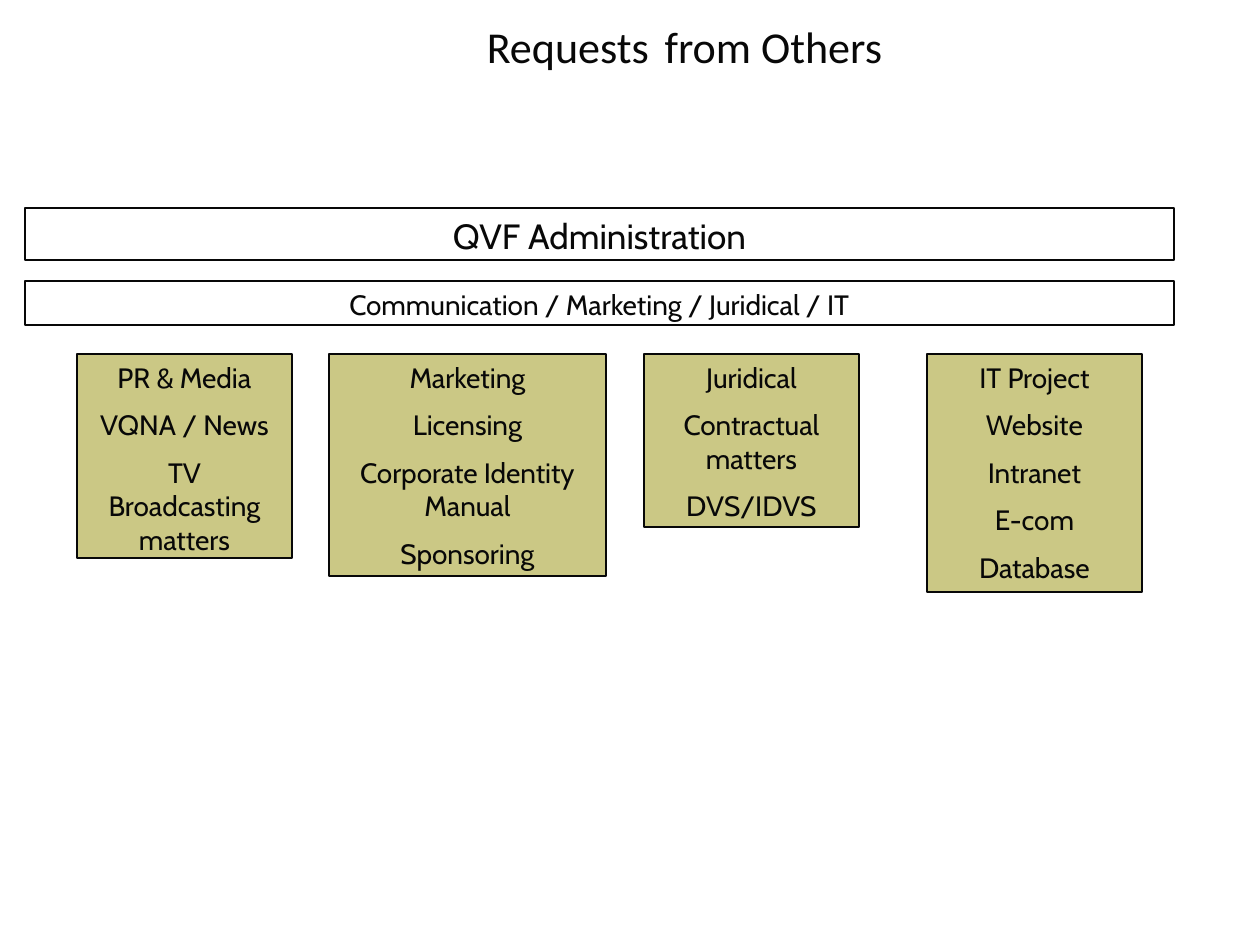
from pptx import Presentation
from pptx.dml.color import RGBColor
from pptx.enum.shapes import MSO_SHAPE as Shape
from pptx.enum.text import MSO_ANCHOR as Anchor, MSO_AUTO_SIZE as AutoSize, PP_ALIGN as Align
from pptx.util import Emu, Pt

INK = RGBColor(0x08, 0x08, 0x08)
OLIVE = RGBColor(0xCB, 0xC8, 0x85)
PX = 914400 // 126


def px(length):
    return Emu(length * PX)


class Chart:
    title_font = "Calibri"
    body_font = "Cabin"
    line_width = Pt(1.5)

    def __init__(self, deck):
        self.page = deck.slides.add_slide(deck.slide_layouts[5])

    def style(self, span, font, size):
        span.font.name = font
        span.font.size = Pt(size)
        span.font.color.rgb = INK

    def title(self, left, top, width, height, spans):
        box = self.page.shapes.title
        box.left, box.top, box.width, box.height = map(px, (left, top, width, height))
        frame = box.text_frame
        frame.auto_size = AutoSize.NONE
        frame.vertical_anchor = Anchor.MIDDLE
        para = frame.paragraphs[0]
        para.alignment = Align.CENTER
        for text, size in spans:
            span = para.add_run()
            span.text = text
            self.style(span, self.title_font, size)

    def box(self, left, top, width, height, lines, size=16, fill=None):
        box = self.page.shapes.add_shape(Shape.RECTANGLE, *map(px, (left, top, width, height)))
        box.shadow.inherit = False
        box.line.color.rgb = INK
        box.line.width = self.line_width
        if fill is None:
            box.fill.background()
        else:
            box.fill.solid()
            box.fill.fore_color.rgb = fill
        frame = box.text_frame
        frame.word_wrap = True
        frame.auto_size = AutoSize.SHAPE_TO_FIT_TEXT
        frame.vertical_anchor = Anchor.TOP
        frame.text = "\n".join(lines)
        for index, para in enumerate(frame.paragraphs):
            para.alignment = Align.CENTER
            para.space_before = Pt(size / 2 if index else 0)
            self.style(para.runs[0], self.body_font, size)


def main():
    deck = Presentation()
    deck.slide_width, deck.slide_height = px(1260), px(945)
    chart = Chart(deck)
    chart.title(195, 6, 979, 59, [("Requests", 25.2), (" ", 39.6), ("from Others", 25.2)])
    chart.box(25, 208, 1149, 52, ["QVF Administration"], size=20)
    chart.box(25, 281, 1149, 44, ["Communication / Marketing / Juridical / IT"])
    departments = [
        (77, 215, 204, ["PR & Media", "VQNA / News", "TV Broadcasting matters"]),
        (329, 277, 222, ["Marketing", "Licensing", "Corporate Identity Manual", "Sponsoring"]),
        (644, 215, 173, ["Juridical", "Contractual matters", "DVS/IDVS"]),
        (927, 215, 238, ["IT Project", "Website", "Intranet", "E-com", "Database"]),
    ]
    for left, width, height, lines in departments:
        chart.box(left, 354, width, height, lines, fill=OLIVE)
    deck.save("out.pptx")


if __name__ == "__main__":
    main()
